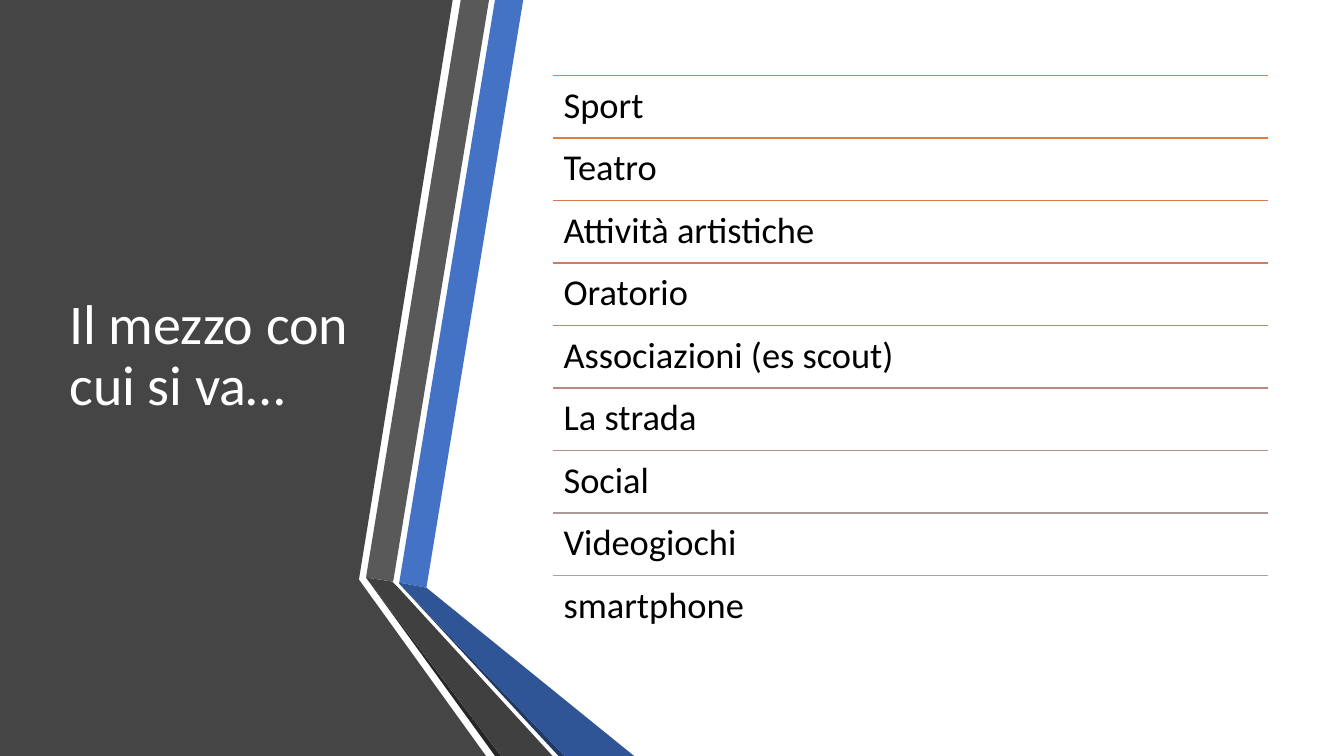
from lxml import etree
from pptx import Presentation
from pptx import util as u
from pptx.dml.color import RGBColor
from pptx.enum import shapes, text
from pptx.oxml.ns import qn

WIDTH, HEIGHT = 13.33, 7.5
LIST_LEFT, LIST_TOP, LIST_WIDTH, ROW_HEIGHT = 5.48, 0.75, 7.1, 0.62

WHITE = RGBColor(0xFF, 0xFF, 0xFF)
BLACK = RGBColor(0x00, 0x00, 0x00)
PANEL = RGBColor(0x45, 0x45, 0x45)
BLUE = RGBColor(0x44, 0x72, 0xC4)
BLUE_FOLD = RGBColor(0x2F, 0x55, 0x97)
BLUE_EDGE = RGBColor(0x20, 0x38, 0x64)
GREY = RGBColor(0x59, 0x59, 0x59)
GREY_FOLD = RGBColor(0x40, 0x40, 0x40)
GREY_EDGE = RGBColor(0x26, 0x26, 0x26)

# Outlines from back to front
BANDS = [
    (PANEL, [(0, 0), (4.49, 0), (3.56, 5.75), (4.82, HEIGHT), (0, HEIGHT)]),
    (BLUE, [(3.96, 5.78), (4.23, 5.83), (5.19, 0), (4.91, 0)]),
    (GREY, [(4.85, 0), (4.57, 0), (3.63, 5.73), (3.9, 5.77)]),
    (GREY_EDGE, [(3.63, 5.73), (4.91, HEIGHT), (4.97, HEIGHT)]),
    (BLUE_EDGE, [(3.96, 5.79), (5.54, HEIGHT), (5.6, HEIGHT)]),
    (BLUE_FOLD, [(3.96, 5.79), (5.6, HEIGHT), (6.29, HEIGHT),
                 (4.23, 5.83), (3.96, 5.78)]),
    (GREY_FOLD, [(5.48, HEIGHT), (3.95, 5.83), (3.89, 5.77),
                 (3.63, 5.73), (4.97, HEIGHT)]),
]

# Each item with the colour of the rule above it
ITEMS = [
    ("Sport", RGBColor(0xED, 0x7D, 0x31)),
    ("Teatro", RGBColor(0xE2, 0x7A, 0x42)),
    ("Attività artistiche", RGBColor(0xD8, 0x7A, 0x51)),
    ("Oratorio", RGBColor(0xCE, 0x7C, 0x61)),
    ("Associazioni (es scout)", RGBColor(0xC4, 0x81, 0x70)),
    ("La strada", RGBColor(0xBC, 0x87, 0x7E)),
    ("Social", RGBColor(0xB4, 0x90, 0x8B)),
    ("Videogiochi", RGBColor(0xAC, 0x9A, 0x99)),
    ("smartphone", RGBColor(0xA5, 0xA5, 0xA5)),
]


def add_band(slide, color, points):
    corners = [(u.Inches(x), u.Inches(y)) for x, y in points]
    builder = slide.shapes.build_freeform(*corners[0])
    builder.add_line_segments(corners[1:], close=True)
    sp = builder.convert_to_shape()
    sp.shadow.inherit = False
    sp.fill.solid()
    sp.fill.fore_color.rgb = color
    sp.line.fill.background()


def add_text(slide, wording, box, *, size, color,
             anchor=text.MSO_ANCHOR.TOP, inset_x=0.1, inset_y=0.05):
    sp = slide.shapes.add_textbox(*map(u.Inches, box))
    tf = sp.text_frame
    tf.word_wrap = True
    tf.vertical_anchor = anchor
    tf.margin_left = tf.margin_right = u.Inches(inset_x)
    tf.margin_top = tf.margin_bottom = u.Inches(inset_y)
    p = tf.paragraphs[0]
    p.line_spacing = 0.9
    r = p.add_run()
    r.text = wording
    r.font.name = "Calibri"
    r.font.size = u.Pt(size)
    r.font.color.rgb = color


def add_rule(slide, left, top, width, color):
    ends = map(u.Inches, (left, top, left + width, top))
    line = slide.shapes.add_connector(shapes.MSO_CONNECTOR.STRAIGHT, *ends)
    line.line.color.rgb = color
    line.line.width = u.Pt(1)
    etree.SubElement(line._element.spPr, qn("a:effectLst"))


def main():
    prs = Presentation()
    prs.slide_width, prs.slide_height = u.Inches(WIDTH), u.Inches(HEIGHT)
    slide = prs.slides.add_slide(prs.slide_layouts[6])

    for color, points in BANDS:
        add_band(slide, color, points)

    add_text(slide, "Il mezzo con cui si va…", (0.59, 0.75, 3.04, 5.58),
             size=40, color=WHITE, anchor=text.MSO_ANCHOR.MIDDLE)

    for row, (item, color) in enumerate(ITEMS):
        top = LIST_TOP + row * ROW_HEIGHT
        add_rule(slide, LIST_LEFT, top, LIST_WIDTH, color)
        add_text(slide, item, (LIST_LEFT, top, LIST_WIDTH, ROW_HEIGHT),
                 size=26, color=BLACK, inset_x=0.11, inset_y=0.11)

    prs.save("out.pptx")


if __name__ == "__main__":
    main()
